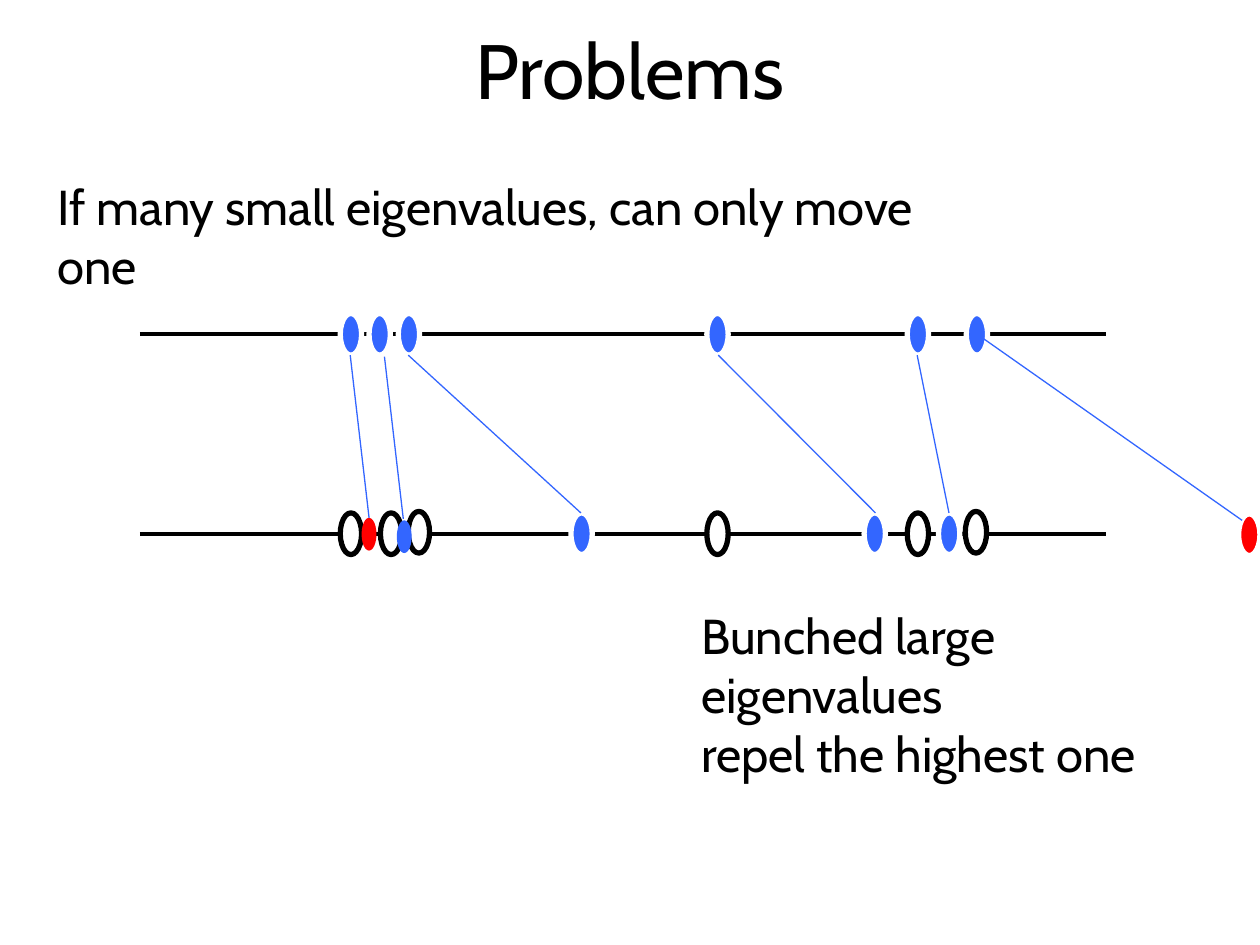
from dataclasses import dataclass

from lxml import etree
from pptx import Presentation
from pptx import util as u
from pptx.dml.color import RGBColor
from pptx.enum import shapes, text
from pptx.oxml.ns import qn
from pptx.util import Cm

BLACK = RGBColor(0x00, 0x00, 0x00)
WHITE = RGBColor(0xFF, 0xFF, 0xFF)
BLUE = RGBColor(0x33, 0x66, 0xFF)
RED = RGBColor(0xFF, 0x00, 0x00)
FONT = "Cabin"


@dataclass
class Marker:
    left: float
    top: float
    fill: RGBColor
    outline: RGBColor | None = WHITE
    width: float = 0.43
    height: float = 0.84


@dataclass
class Line:
    x1: float
    y1: float
    x2: float
    y2: float
    color: RGBColor = BLUE
    weight: float = 0.75


@dataclass
class Label:
    left: float
    top: float
    width: float
    height: float
    paragraphs: list[str]
    size: int
    align: text.PP_ALIGN
    frame_format: dict


def draw_marker(page, marker: Marker) -> None:
    oval = page.shapes.add_shape(
        shapes.MSO_SHAPE.OVAL, Cm(marker.left), Cm(marker.top),
        Cm(marker.width), Cm(marker.height))
    oval.shadow.inherit = False
    oval.fill.solid()
    oval.fill.fore_color.rgb = marker.fill
    if marker.outline is None:
        oval.line.fill.background()
    else:
        oval.line.color.rgb = marker.outline
        oval.line.width = u.Pt(3)


def draw_line(page, line: Line) -> None:
    connector = page.shapes.add_connector(
        shapes.MSO_CONNECTOR.STRAIGHT,
        Cm(line.x1), Cm(line.y1), Cm(line.x2), Cm(line.y2))
    connector.line.color.rgb = line.color
    connector.line.width = u.Pt(line.weight)
    etree.SubElement(connector._element.spPr, qn("a:effectLst"))


def draw_label(page, label: Label) -> None:
    box = page.shapes.add_textbox(
        Cm(label.left), Cm(label.top), Cm(label.width), Cm(label.height))
    frame = box.text_frame
    for name, value in {"word_wrap": True, **label.frame_format}.items():
        setattr(frame, name, value)
    for index, words in enumerate(label.paragraphs):
        para = frame.add_paragraph() if index else frame.paragraphs[0]
        para.alignment = label.align
        span = para.add_run()
        span.text = words
        for name, value in {"name": FONT, "size": u.Pt(label.size)}.items():
            setattr(span.font, name, value)
        span.font.color.rgb = BLACK


UPPER, LOWER = 6.32, 10.34
LINK_START = 7.16

LABELS = [
    Label(1.27, -0.2, 22.86, 3.18, ["Problems"], 44, text.PP_ALIGN.CENTER,
          {"vertical_anchor": text.MSO_ANCHOR.MIDDLE}),
    Label(0.91, 3.43, 19.2, 1.45,
          ["If many small eigenvalues, can only move one"], 28,
          text.PP_ALIGN.LEFT, {}),
    Label(13.89, 12.09, 11.51, 2.64,
          ["Bunched large eigenvalues", "repel the highest one"], 28,
          text.PP_ALIGN.LEFT, {"margin_right": Cm(0.4)}),
]
AXES = [Line(2.82, y, 22.3, y, BLACK, 2.25) for y in (6.73, 10.77)]
EIGENVALUES = [Marker(x, UPPER, BLUE)
               for x in (6.86, 7.44, 8.03, 14.25, 18.29, 19.48)]
MOVED = [Marker(x, LOWER, BLUE) for x in (11.51, 17.42, 18.92)]
OLD_PLACES = [Marker(x, y, WHITE, BLACK) for x, y in (
    (6.86, LOWER), (8.23, 10.31), (14.25, LOWER), (18.29, LOWER),
    (7.67, LOWER), (19.46, 10.31))]
SMALL_MOVED = [
    Marker(7.29, 10.44, RED, None, 0.3, 0.66),
    Marker(8.0, 10.49, BLUE, None, 0.3, 0.66),
]
HIGHEST = Marker(24.97, 10.36, RED)
LINKS = [
    Line(7.06, LINK_START, 7.44, 10.44),
    Line(7.75, 7.19, 8.13, 10.46),
    Line(8.23, LINK_START, 11.71, LOWER),
    Line(14.48, LINK_START, 17.65, LOWER),
    Line(18.49, LINK_START, 19.13, LOWER),
    Line(19.66, 6.71, 25.04, 10.49),
]


def main() -> None:
    deck = Presentation()
    deck.slide_width, deck.slide_height = Cm(25.4), Cm(19.05)
    page = deck.slides.add_slide(deck.slide_layouts[6])
    for label in LABELS:
        draw_label(page, label)
    for axis in AXES:
        draw_line(page, axis)
    for marker in EIGENVALUES + MOVED + OLD_PLACES + SMALL_MOVED + [HIGHEST]:
        draw_marker(page, marker)
    for link in LINKS:
        draw_line(page, link)
    deck.save("out.pptx")


if __name__ == "__main__":
    main()
